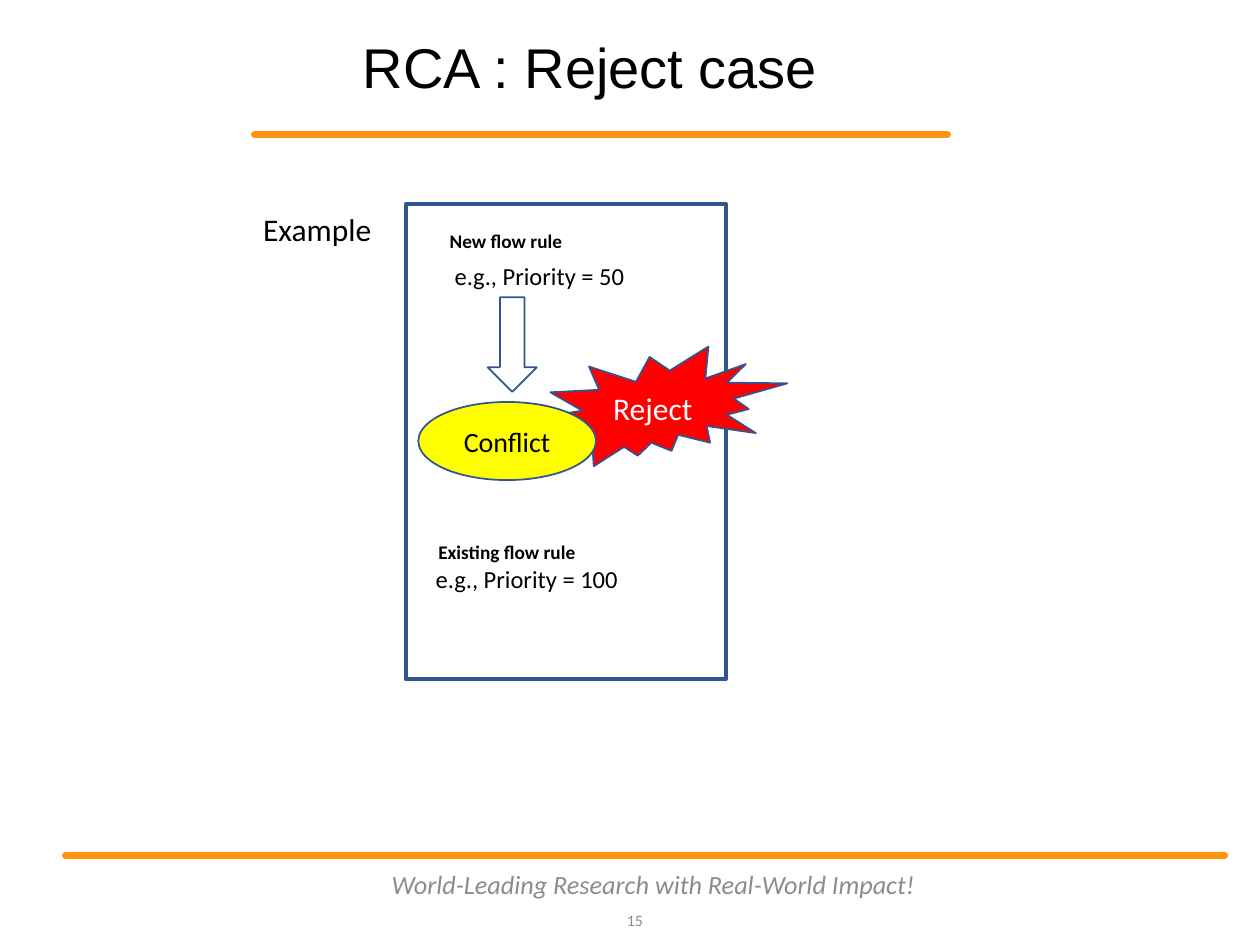
from pptx import Presentation
from pptx import util as u
from pptx.dml.color import RGBColor
from pptx.enum import shapes, text
from pptx.oxml.ns import qn
from lxml import etree

BLACK = RGBColor(0, 0, 0)
WHITE = RGBColor(255, 255, 255)
GRAY = RGBColor(0x8C, 0x8C, 0x8C)
BLUE = RGBColor(0x32, 0x54, 0x91)
RED = RGBColor(255, 0, 0)
YELLOW = RGBColor(255, 255, 0)
ORANGE = RGBColor(0xFF, 0x95, 0x0E)

KIND = shapes.MSO_SHAPE
LEFT, MID, RIGHT = text.PP_ALIGN.LEFT, text.PP_ALIGN.CENTER, text.PP_ALIGN.RIGHT
TOP, CORE, LOW = (text.MSO_ANCHOR.TOP, text.MSO_ANCHOR.MIDDLE,
                  text.MSO_ANCHOR.BOTTOM)

# left, right, height of each rule across the slide
BARS = [(2.02, 7.52, 1.07), (0.52, 9.72, 6.79)]

# kind, box, fill, line width, label, size, colour
FORMS = [
    (KIND.RECTANGLE, (3.22, 1.62, 2.54, 3.77), None, 2.25, "", 0, BLACK),
    (KIND.EXPLOSION2, (4.26, 2.75, 1.99, 0.95), RED, 1, "Reject", 18, WHITE),
    (KIND.OVAL, (3.32, 3.19, 1.41, 0.62), YELLOW, 1, "Conflict", 16, BLACK),
    (KIND.DOWN_ARROW, (3.87, 2.36, 0.39, 0.75), WHITE, 1, "", 0, BLACK),
]

# words, box, size, bold
NOTES = [
    ("Example", (1.99, 1.62, 1.24, 0.4), 18, False),
    ("New flow rule", (3.47, 1.77, 1.39, 0.29), 11, True),
    ("e.g., Priority = 50", (3.51, 2.02, 1.59, 0.34), 14, False),
    ("Existing flow rule", (3.38, 4.24, 1.39, 0.29), 11, True),
    ("e.g., Priority = 100", (3.36, 4.43, 1.91, 0.34), 14, False),
]

TITLE = ("RCA : Reject case", (1.99, 0.34, 5.39, 0.51))
MOTTO = ("World-Leading Research with Real-World Impact!", (3, 6.82, 4.37, 0.4))
PAGE = ("15", (4.8, 7.1, 0.4, 0.4))


def write(shape, words, size, color, align=LEFT, anchor=TOP, face="Calibri",
          bold=False, italic=False):
    frame = shape.text_frame
    frame.word_wrap = True
    frame.vertical_anchor = anchor
    para = frame.paragraphs[0]
    para.alignment = align
    run = para.add_run()
    run.text = words
    font = run.font
    font.name, font.size, font.color.rgb = face, u.Pt(size), color
    font.bold, font.italic = bold, italic
    return para


def label(slide, words, box, size, color=BLACK, **style):
    area = slide.shapes.add_textbox(*map(u.Inches, box))
    return write(area, words, size, color, **style)


def bar(slide, left, right, y):
    line = slide.shapes.add_connector(
        shapes.MSO_CONNECTOR.STRAIGHT, *map(u.Inches, (left, y, right, y)))
    line.line.color.rgb = ORANGE
    line.line.width = u.Pt(4)
    props = line._element.spPr
    props.find(qn("a:ln")).set("cap", "rnd")
    etree.SubElement(props, qn("a:effectLst"))


def form(slide, kind, box, fill, width, words, size, color):
    shape = slide.shapes.add_shape(kind, *map(u.Inches, box))
    shape.shadow.inherit = False
    if fill is None:
        shape.fill.background()
    else:
        shape.fill.solid()
        shape.fill.fore_color.rgb = fill
    shape.line.color.rgb = BLUE
    shape.line.width = u.Pt(width)
    if words:
        write(shape, words, size, color, MID, CORE)


def main():
    deck = Presentation()
    deck.slide_width, deck.slide_height = u.Inches(10), u.Inches(7.5)
    slide = deck.slides.add_slide(deck.slide_layouts[6])
    for row in BARS:
        bar(slide, *row)
    head = label(slide, *TITLE, 32, align=MID, anchor=LOW, face="Arial")
    head.line_spacing = 0.9
    label(slide, *MOTTO, 15, GRAY, align=MID, anchor=CORE, italic=True)
    label(slide, *PAGE, 9, GRAY, align=RIGHT, anchor=CORE)
    for row in FORMS:
        form(slide, *row)
    for words, box, size, bold in NOTES:
        label(slide, words, box, size, bold=bold)
    deck.save("out.pptx")


if __name__ == "__main__":
    main()
